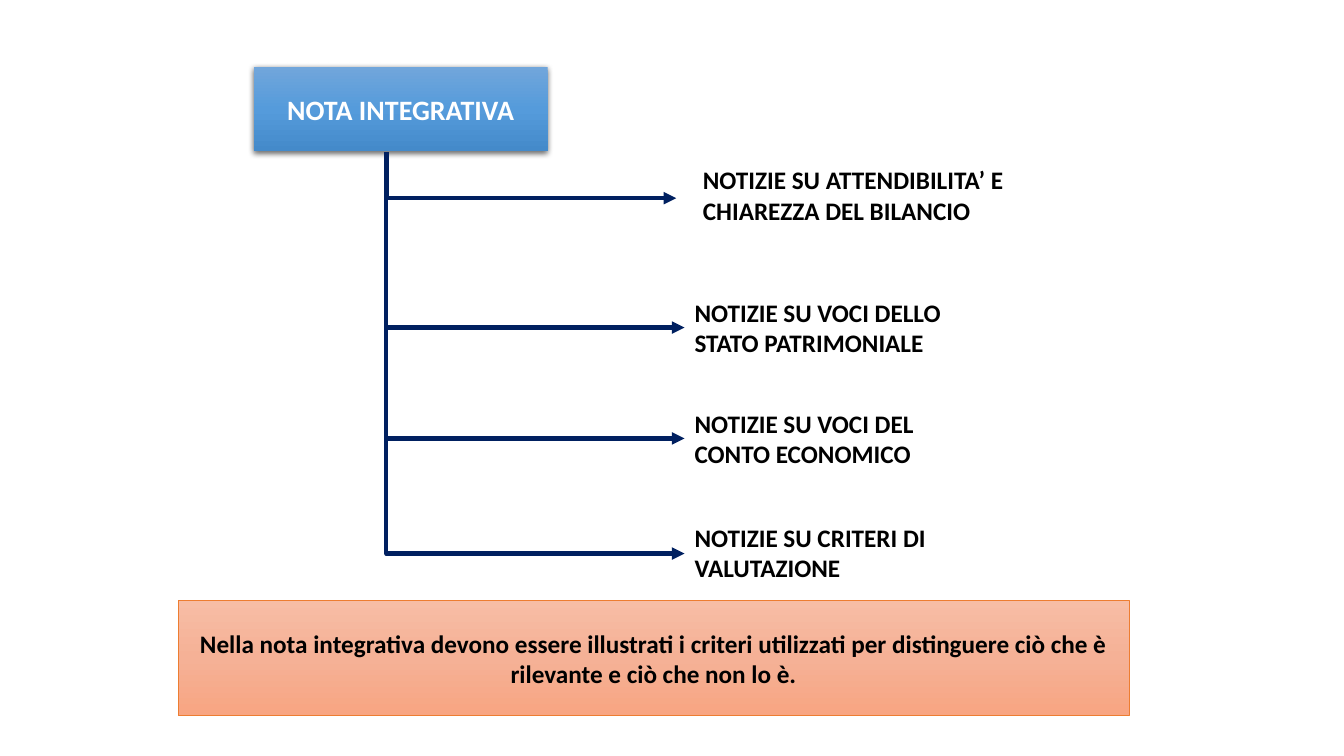
"""Build the slide on the contents of the notes to the accounts."""
from dataclasses import dataclass

from lxml import etree
from pptx import Presentation
from pptx.dml.color import RGBColor
from pptx.enum.dml import MSO_LINE
from pptx.enum.shapes import MSO_CONNECTOR, MSO_SHAPE
from pptx.enum.text import MSO_ANCHOR, MSO_AUTO_SIZE, PP_ALIGN
from pptx.oxml.ns import qn
from pptx.util import Inches, Pt

ELBOW = MSO_CONNECTOR.ELBOW
RECT = MSO_SHAPE.RECTANGLE
SOLID = MSO_LINE.SOLID
MIDDLE = MSO_ANCHOR.MIDDLE
FIXED = MSO_AUTO_SIZE.NONE
LEFT, CENTER = PP_ALIGN.LEFT, PP_ALIGN.CENTER

WIDE, HIGH = Inches(13.33), Inches(7.5)
COLS, ROWS = 160, 90
TRUNK = 46
FONT = "Calibri"
COLORS = {
    "navy": "002060", "black": "000000", "white": "FFFFFF", "orange": "ED7D31",
}
BLUES = ("71A6DB", "559BDB", "448ACA")
PEACHES = ("F7BDA5", "F5B196", "F8A582")


@dataclass(frozen=True)
class Box:
    """A rectangle in grid columns and rows."""
    col: float
    row: float
    wide: float
    high: float

    def place(self) -> tuple[int, int, int, int]:
        """Return left, top, width and height in EMU."""
        return (across(self.col), down(self.row),
                across(self.wide), down(self.high))


@dataclass(frozen=True)
class Branch:
    """A topic and the arrow that leads to it."""
    lines: tuple[str, str]
    box: Box
    start: float
    tip: float
    level: float


HEAD = Box(30.2, 8, 35, 10)
BANNER = Box(21.2, 71.5, 113.2, 13.7)
BRANCHES = (
    Branch(("NOTIZIE SU ATTENDIBILITA’ E", "CHIAREZZA DEL BILANCIO"),
           Box(82.5, 18.7, 41, 9), 18.1, 80.5, 23.6),
    Branch(("NOTIZIE SU VOCI DELLO", "STATO PATRIMONIALE"),
           Box(81.5, 34, 41, 10), 19, 81.5, 39),
    Branch(("NOTIZIE SU VOCI DEL", "CONTO ECONOMICO"),
           Box(81.5, 47.2, 42, 10), 18.1, 81.5, 52.2),
    Branch(("NOTIZIE SU CRITERI DI", "VALUTAZIONE"),
           Box(81.5, 61.3, 41, 9), 18.4, 81.5, 65.9),
)
NOTE = ("Nella nota integrativa devono essere illustrati i criteri utilizzati "
        "per distinguere ciò che è rilevante e ciò che non lo è.")


def across(cols: float) -> int:
    """Turn grid columns into EMU."""
    return round(WIDE * cols / COLS)


def down(rows: float) -> int:
    """Turn grid rows into EMU."""
    return round(HIGH * rows / ROWS)


def paint(name: str) -> RGBColor:
    """Look up a colour by name."""
    return RGBColor.from_string(COLORS[name])


def write(shape, lines: tuple[str, ...], size: int, color: str,
          align: PP_ALIGN, wrap: bool) -> None:
    """Fill a shape with bold paragraphs."""
    frame = shape.text_frame
    frame.text = "\n".join(lines)
    frame.auto_size = FIXED
    frame.word_wrap = wrap
    frame.vertical_anchor = MIDDLE
    for para in frame.paragraphs:
        para.alignment = align
        para.font.name = FONT
        para.font.size = Pt(size)
        para.font.bold = True
        para.font.color.rgb = paint(color)


def shade(shape, tones: tuple[str, ...]) -> None:
    """Fill a shape with evenly spaced tones from top to bottom."""
    shape.fill.gradient()
    shape.fill.gradient_angle = 270
    stops = shape.element.spPr.find(f".//{qn('a:gsLst')}")
    for stop in list(stops):
        stops.remove(stop)
    for step, tone in enumerate(tones):
        share = 100000 * step // (len(tones) - 1)
        stop = etree.SubElement(stops, qn("a:gs"), pos=str(share))
        etree.SubElement(stop, qn("a:srgbClr"), val=tone)


def cast(shape) -> None:
    """Give a shape a soft shadow below it."""
    effects = etree.SubElement(shape.element.spPr, qn("a:effectLst"))
    outer = etree.SubElement(
        effects, qn("a:outerShdw"), blurRad=str(Pt(4.5)), dist=str(Pt(1.5)),
        dir="5400000", algn="ctr", rotWithShape="0")
    color = etree.SubElement(outer, qn("a:srgbClr"), val=COLORS["black"])
    etree.SubElement(color, qn("a:alpha"), val="63000")


def link(slide, branch: Branch) -> None:
    """Draw an arrow down the trunk and right to a topic."""
    run = across(branch.tip - TRUNK)
    drop = down(branch.level - branch.start)
    left = across(TRUNK) + (run - drop) // 2
    top = down(branch.start) + (drop - run) // 2
    arrow = slide.shapes.add_connector(ELBOW, left + drop, top, left, top + run)
    arrow.line.color.rgb = paint("navy")
    arrow.line.width = Pt(3)
    arrow.line.dash_style = SOLID
    props = arrow.element.spPr
    props.find(qn("a:xfrm")).set("rot", "16200000")
    props.find(qn("a:prstGeom")).set("prst", "bentConnector2")
    etree.SubElement(props.find(qn("a:ln")), qn("a:tailEnd"), type="triangle")
    etree.SubElement(props, qn("a:effectLst"))


def main() -> None:
    """Draw the slide and save it."""
    deck = Presentation()
    deck.slide_width, deck.slide_height = WIDE, HIGH
    slide = deck.slides.add_slide(deck.slide_layouts.get_by_name("Title Only"))

    title = slide.shapes.title
    title.left, title.top, title.width, title.height = HEAD.place()
    shade(title, BLUES)
    title.line.fill.background()
    cast(title)
    write(title, ("NOTA INTEGRATIVA",), 20, "white", CENTER, False)

    for branch in BRANCHES:
        topic = slide.shapes.add_textbox(*branch.box.place())
        write(topic, branch.lines, 18, "black", LEFT, False)
        link(slide, branch)

    banner = slide.shapes.add_shape(RECT, *BANNER.place())
    banner.shadow.inherit = False
    shade(banner, PEACHES)
    banner.line.color.rgb = paint("orange")
    banner.line.width = Pt(0.5)
    write(banner, (NOTE,), 18, "black", CENTER, True)

    deck.save("out.pptx")


if __name__ == "__main__":
    main()
